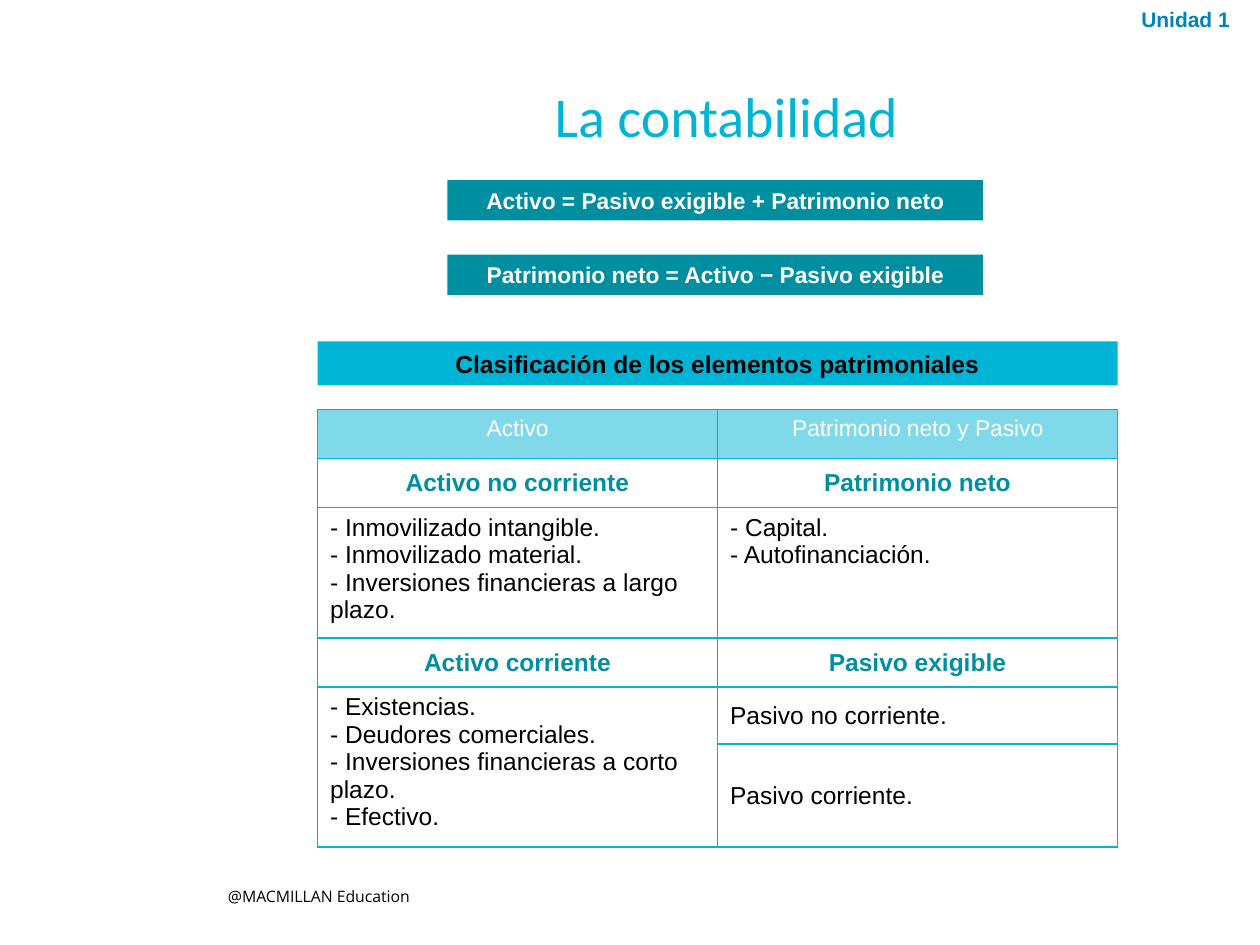
from lxml import etree
from pptx import Presentation
from pptx.dml.color import RGBColor
from pptx.enum.shapes import MSO_SHAPE
from pptx.enum.text import MSO_ANCHOR, MSO_AUTO_SIZE, PP_ALIGN
from pptx.oxml.ns import qn
from pptx.util import Inches, Pt

RECT = MSO_SHAPE.RECTANGLE
TOP, MIDDLE = MSO_ANCHOR.TOP, MSO_ANCHOR.MIDDLE
LEFT, CENTER = PP_ALIGN.LEFT, PP_ALIGN.CENTER
COLORS = {"cyan": "00B4D5", "teal": "008FA0", "blue": "0083BB",
          "white": "FFFFFF", "black": "000000"}


def rgb(name):
    return RGBColor.from_string(COLORS[name])


def write(tf, text, size, color, bold=False, align=LEFT, font="Arial"):
    """Fill a text frame and format every run in it."""
    tf.text = text
    for p in tf.paragraphs:
        p.alignment = align
        for r in p.runs:
            r.font.name = font
            r.font.size = Pt(size)
            r.font.bold = bold
            r.font.color.rgb = rgb(color)


prs = Presentation()
prs.slide_width, prs.slide_height = Inches(10), Inches(7.5)
s = prs.slides.add_slide(prs.slide_layouts[5])

# Title
title = s.shapes.title
title.left, title.top = Inches(1.53), Inches(0.68)
title.width, title.height = Inches(8.47), Inches(0.54)
tf = title.text_frame
write(tf, "La contabilidad", 32, "cyan", align=CENTER, font="Calibri")
tf.auto_size = MSO_AUTO_SIZE.NONE
tf.vertical_anchor = MIDDLE
tf.paragraphs[0].line_spacing = 0.9

# Footer and unit label
labels = [
    ("@MACMILLAN Education", 1.71, 6.99, 1.92, 0.25, 9, "black", False, "Open Sans"),
    ("Unidad 1", 8.96, 0, 1.04, 0.3, 12, "blue", True, "Arial"),
]
for text, x, y, w, h, size, color, bold, font in labels:
    box = s.shapes.add_textbox(Inches(x), Inches(y), Inches(w), Inches(h))
    box.text_frame.word_wrap = True
    write(box.text_frame, text, size, color, bold, font=font)

# Equations and table heading
bars = [
    ("Activo = Pasivo exigible + Patrimonio neto", 3.55, 1.43, 4.25, 0.32, 13, "teal", "white"),
    ("Patrimonio neto = Activo − Pasivo exigible", 3.55, 2.02, 4.25, 0.32, 13, "teal", "white"),
    ("Clasificación de los elementos patrimoniales", 2.52, 2.71, 6.35, 0.35, 14, "cyan", "black"),
]
for text, x, y, w, h, size, fill, color in bars:
    sp = s.shapes.add_shape(RECT, Inches(x), Inches(y), Inches(w), Inches(h))
    sp.shadow.inherit = False
    sp.fill.solid()
    sp.fill.fore_color.rgb = rgb(fill)
    sp.line.fill.background()
    sp.text_frame.vertical_anchor = MIDDLE
    write(sp.text_frame, text, size, color, True, CENTER)

# Classification table: style is size, colour, bold, alignment, anchor
STYLES = {
    "header": (13, "white", False, CENTER, TOP),
    "group": (14, "teal", True, CENTER, MIDDLE),
    "list": (14, "black", False, LEFT, TOP),
    "item": (14, "black", False, LEFT, MIDDLE),
}
rows = [
    (0.39, ("header", "Activo"), ("header", "Patrimonio neto y Pasivo")),
    (0.39, ("group", "Activo no corriente"), ("group", "Patrimonio neto")),
    (1.03,
     ("list", "- Inmovilizado intangible.\n- Inmovilizado material.\n"
              "- Inversiones financieras a largo plazo."),
     ("list", "- Capital.\n- Autofinanciación.")),
    (0.39, ("group", "Activo corriente"), ("group", "Pasivo exigible")),
    (0.45,
     ("list", "- Existencias.\n- Deudores comerciales.\n"
              "- Inversiones financieras a corto plazo.\n- Efectivo."),
     ("item", "Pasivo no corriente.")),
    (0.82, ("list", ""), ("item", "Pasivo corriente.")),
]
table = s.shapes.add_table(len(rows), 2, Inches(2.52), Inches(3.25),
                           Inches(6.35), Inches(3.47)).table
table.first_row = table.horz_banding = False
for col in table.columns:
    col.width = Inches(6.35 / 2)
table.cell(4, 0).merge(table.cell(5, 0))

for i, (height, *cells) in enumerate(rows):
    table.rows[i].height = Inches(height)
    for j, (kind, text) in enumerate(cells):
        cell = table.cell(i, j)
        size, color, bold, align, anchor = STYLES[kind]
        cell.vertical_anchor = anchor
        if text:
            write(cell.text_frame, text, size, color, bold, align)
        tcPr = cell._tc.get_or_add_tcPr()
        for side in ("lnL", "lnR", "lnT", "lnB"):
            ln = etree.SubElement(tcPr, qn("a:" + side), w=str(Pt(1)))
            solid = etree.SubElement(ln, qn("a:solidFill"))
            etree.SubElement(solid, qn("a:srgbClr"), val=COLORS["cyan"])
        if kind == "header":
            cell.fill.solid()
            cell.fill.fore_color.rgb = rgb("cyan")
            clr = tcPr.find(qn("a:solidFill")).find(qn("a:srgbClr"))
            etree.SubElement(clr, qn("a:alpha"), val="50000")
        else:
            cell.fill.background()

prs.save("out.pptx")
